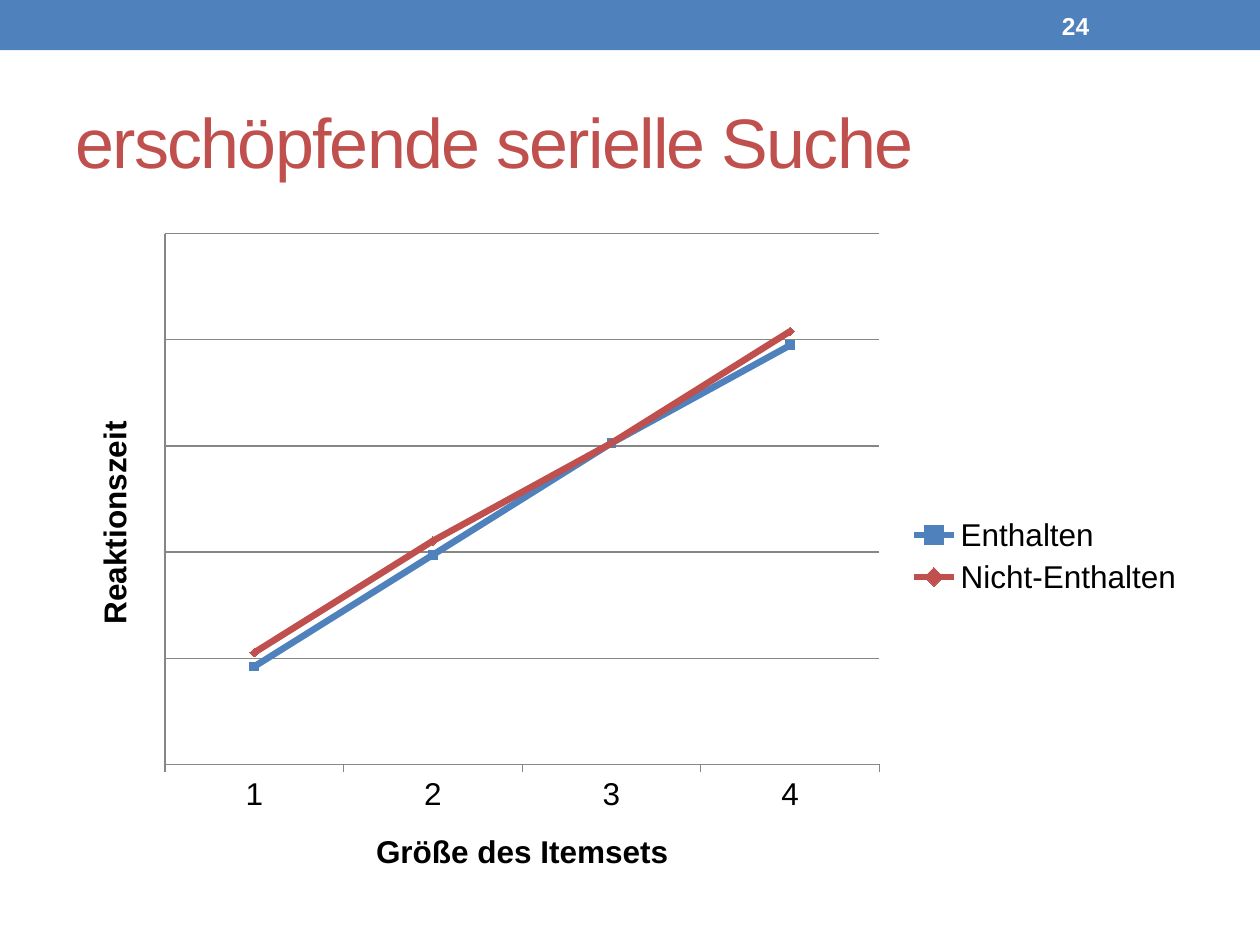
"""Build the slide on exhaustive serial search with its reaction time chart."""
from dataclasses import dataclass
from typing import Any

from lxml.etree import SubElement
from pptx import Presentation
from pptx.chart.data import CategoryChartData
from pptx.dml.color import RGBColor
from pptx.enum.chart import (XL_CHART_TYPE, XL_LEGEND_POSITION, XL_MARKER_STYLE,
                             XL_TICK_LABEL_POSITION, XL_TICK_MARK)
from pptx.enum.shapes import MSO_SHAPE
from pptx.enum.text import MSO_ANCHOR, PP_ALIGN
from pptx.oxml.ns import qn
from pptx.util import Inches, Pt

COLORS = {"blue": "4F81BD", "red": "C0504D", "white": "FFFFFF",
          "black": "000000", "grid": "868686"}
FONT = "Arial"
SLIDE_WIDTH, SLIDE_HEIGHT = Inches(10), Inches(7.5)
MARGIN = 0.05
CONTENT_WIDTH = 1 - 2 * MARGIN
PLOT_SHARES = {"x": 0.09, "y": 0.02, "w": 0.63, "h": 0.79}
SCALE = {"minimum_scale": 69, "maximum_scale": 107, "major_unit": 7.6}
ITEM_SET_SIZES = ["1", "2", "3", "4"]


@dataclass(frozen=True)
class Box:
    """Position and size as shares of the slide."""
    left: float
    top: float
    width: float
    height: float

    def lengths(self) -> tuple[int, int, int, int]:
        """Return left, top, width and height in EMU."""
        return (int(self.left * SLIDE_WIDTH), int(self.top * SLIDE_HEIGHT),
                int(self.width * SLIDE_WIDTH), int(self.height * SLIDE_HEIGHT))


@dataclass(frozen=True)
class Condition:
    """One line of the chart."""
    label: str
    times: tuple[int, ...]
    color: str
    marker: Any


CONDITIONS = [
    Condition("Enthalten", (76, 84, 92, 99), "blue", XL_MARKER_STYLE.SQUARE),
    Condition("Nicht-Enthalten", (77, 85, 92, 100), "red", XL_MARKER_STYLE.DIAMOND),
]


def apply(target: Any, values: dict[str, Any]) -> None:
    """Set every attribute given in values."""
    for attribute, value in values.items():
        setattr(target, attribute, value)


def rgb(color: str) -> RGBColor:
    """Look up a named colour."""
    return RGBColor.from_string(COLORS[color])


def style_font(font: Any, size: float, color: str, bold: bool = False) -> None:
    """Format a font."""
    apply(font, {"name": FONT, "size": Pt(size), "bold": bold})
    font.color.rgb = rgb(color)


def write(holder: Any, text: str, size: float, color: str, bold: bool = False) -> Any:
    """Write one left-aligned, vertically centred line and return its run."""
    frame = holder.text_frame
    apply(frame, {"word_wrap": True, "vertical_anchor": MSO_ANCHOR.MIDDLE})
    paragraph = frame.paragraphs[0]
    paragraph.alignment = PP_ALIGN.LEFT
    run = paragraph.add_run()
    run.text = text
    style_font(run.font, size, color, bold)
    return run


def add_header(slide: Any) -> None:
    """Draw the top band with the page number."""
    band = slide.shapes.add_shape(MSO_SHAPE.RECTANGLE, *Box(0, 0, 1, 0.053).lengths())
    band.shadow.inherit = False
    band.fill.solid()
    band.fill.fore_color.rgb = rgb("blue")
    band.line.fill.background()
    page_number = slide.shapes.add_textbox(*Box(0.833, 0.003, 0.117, 0.048).lengths())
    write(page_number, "24", 14, "white", bold=True)


def add_title(slide: Any) -> None:
    """Fill and place the title."""
    heading = slide.shapes.title
    box = Box(MARGIN, 0.077, CONTENT_WIDTH, 0.144).lengths()
    apply(heading, dict(zip(("left", "top", "width", "height"), box)))
    run = write(heading, "erschöpfende serielle Suche", 40, "red")
    run.font._element.set("spc", "-100")


def place_plot(chart: Any) -> None:
    """Fix the inner plot area as shares of the chart."""
    plot_area = chart._chartSpace.chart.plotArea
    for automatic in plot_area.findall(qn("c:layout")):
        plot_area.remove(automatic)
    layout = SubElement(plot_area, qn("c:layout"))
    plot_area.insert(0, layout)
    manual = SubElement(layout, qn("c:manualLayout"))
    settings = {"layoutTarget": "inner", "xMode": "edge", "yMode": "edge", **PLOT_SHARES}
    for tag, value in settings.items():
        SubElement(manual, qn(f"c:{tag}")).set("val", str(value))


def style_axis(axis: Any, caption: str, values: dict[str, Any]) -> None:
    """Caption and format an axis."""
    apply(axis, {"minor_tick_mark": XL_TICK_MARK.NONE, **values})
    frame = axis.axis_title.text_frame
    frame.text = caption
    style_font(frame.paragraphs[0].runs[0].font, 18, "black", bold=True)
    lines = [axis.format.line]
    if axis.has_major_gridlines:
        lines.append(axis.major_gridlines.format.line)
    for line in lines:
        line.color.rgb = rgb("grid")
        line.width = Pt(0.75)


def add_reaction_chart(slide: Any) -> None:
    """Add the line chart of reaction time by item set size."""
    reaction_times = CategoryChartData()
    reaction_times.categories = ITEM_SET_SIZES
    for condition in CONDITIONS:
        reaction_times.add_series(condition.label, condition.times)
    box = Box(MARGIN, 0.233, CONTENT_WIDTH, 0.711)
    chart = slide.shapes.add_chart(
        XL_CHART_TYPE.LINE_MARKERS, *box.lengths(), reaction_times).chart
    apply(chart, {"has_title": False, "has_legend": True})
    style_font(chart.font, 18, "black")
    apply(chart.legend, {"position": XL_LEGEND_POSITION.RIGHT, "include_in_layout": False})
    chart.plots[0].vary_by_categories = False
    place_plot(chart)
    style_axis(chart.category_axis, "Größe des Itemsets",
               {"major_tick_mark": XL_TICK_MARK.OUTSIDE, "has_major_gridlines": False})
    style_axis(chart.value_axis, "Reaktionszeit",
               {"major_tick_mark": XL_TICK_MARK.NONE, "has_major_gridlines": True,
                "tick_label_position": XL_TICK_LABEL_POSITION.NONE, **SCALE})
    for series, condition in zip(chart.plots[0].series, CONDITIONS):
        series.smooth = False
        series.format.line.color.rgb = rgb(condition.color)
        series.format.line.width = Pt(3.75)
        apply(series.marker, {"style": condition.marker, "size": 5})
        series.marker.format.fill.solid()
        series.marker.format.fill.fore_color.rgb = rgb(condition.color)
        series.marker.format.line.color.rgb = rgb(condition.color)


def main() -> None:
    """Assemble and save the presentation."""
    presentation = Presentation()
    apply(presentation, {"slide_width": SLIDE_WIDTH, "slide_height": SLIDE_HEIGHT})
    slide = presentation.slides.add_slide(presentation.slide_layouts[5])
    add_header(slide)
    add_title(slide)
    add_reaction_chart(slide)
    presentation.save("out.pptx")


if __name__ == "__main__":
    main()
